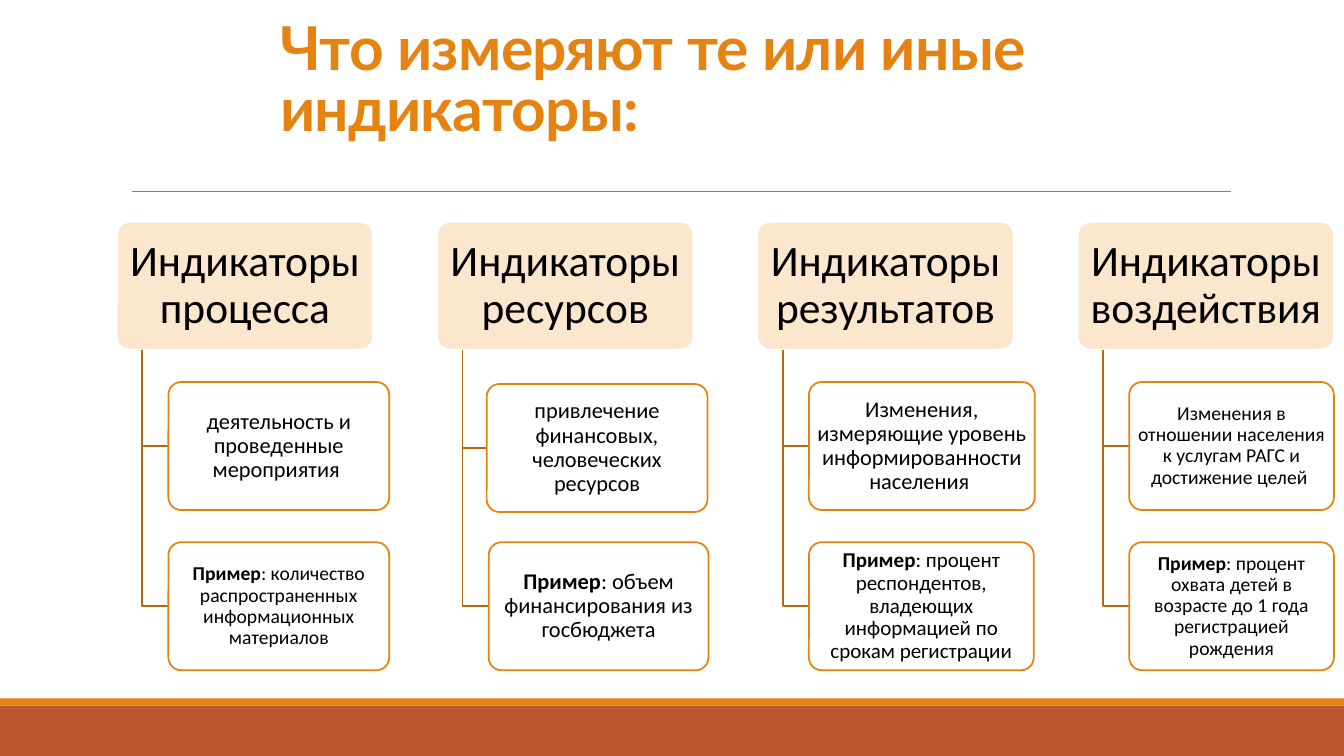
from dataclasses import dataclass

from lxml.etree import SubElement
from pptx import Presentation
from pptx.dml.color import RGBColor
from pptx.enum.shapes import MSO_CONNECTOR, MSO_SHAPE
from pptx.enum.text import MSO_ANCHOR, MSO_AUTO_SIZE, PP_ALIGN
from pptx.oxml.ns import qn
from pptx.util import Inches, Pt


@dataclass(frozen=True)
class Theme:
    accent: str = "E48312"
    footer: str = "BD582C"
    header: str = "FBE6CE"
    branch: str = "B7690E"
    rule: str = "808080"
    paper: str = "FFFFFF"
    ink: str = "000000"
    title_font: str = "Lato"
    body_font: str = "Calibri"
    title_size: float = 43.2
    header_size: float = 31
    line: float = 1.25
    hairline: float = 0.5


THEME = Theme()

TITLE = "Что измеряют те или иные индикаторы:"
EXAMPLE = "Пример"

COLUMN_LEFT = 1.16
COLUMN_PITCH = 9.53 / 3
HEADER_TOP, HEADER_WIDTH, BOX_HEIGHT = 2.2, 2.54, 1.27
TRUNK_INDENT, CARD_INDENT = 0.25, 0.51
CARD_TOPS = (3.79, 5.38)

COLUMNS = [
    ("Индикаторы процесса", [
        {"text": "деятельность и проведенные мероприятия ", "size": 16, "width": 2.19},
        {"lead": EXAMPLE, "text": ": количество распространенных информационных материалов",
         "size": 14, "width": 2.19},
    ]),
    ("Индикаторы ресурсов", [
        {"text": "привлечение финансовых, человеческих ресурсов", "size": 16, "width": 2.19,
         "shift": (-0.02, 0.02)},
        {"lead": EXAMPLE, "text": ": объем финансирования из госбюджета",
         "size": 16, "width": 2.18},
    ]),
    ("Индикаторы результатов", [
        {"text": "Изменения, измеряющие уровень информированности населения ",
         "size": 16, "width": 2.24},
        {"lead": EXAMPLE, "text": ": процент респондентов, владеющих информацией по срокам регистрации",
         "size": 15, "width": 2.23},
    ]),
    ("Индикаторы воздействия", [
        {"text": "Изменения в отношении населения к услугам РАГС и достижение целей ",
         "size": 14, "width": 2.03},
        {"lead": EXAMPLE, "text": ": процент охвата детей в возрасте до 1 года регистрацией рождения",
         "size": 14, "width": 2.03},
    ]),
]


def apply(target, **values):
    for name, value in values.items():
        setattr(target, name, value)


def rgb(color):
    return RGBColor.from_string(color)


def add_run(p, text, font, size, color, bold=False):
    r = p.add_run()
    r.text = text
    apply(r.font, name=font, size=Pt(size), bold=bold)
    r.font.color.rgb = rgb(color)
    return r


def add_box(s, kind, left, top, width, height, fill, line=None):
    sp = s.shapes.add_shape(kind, Inches(left), Inches(top), Inches(width), Inches(height))
    sp.shadow.inherit = False
    sp.fill.solid()
    sp.fill.fore_color.rgb = rgb(fill)
    if line:
        sp.line.color.rgb = rgb(line)
        sp.line.width = Pt(THEME.line)
    else:
        sp.line.fill.background()
    return sp


def add_rounded(s, left, top, width, fill, line, inset):
    sp = add_box(s, MSO_SHAPE.ROUNDED_RECTANGLE, left, top, width, BOX_HEIGHT, fill, line)
    sp.adjustments[0] = 0.1
    side, edge = (Inches(value) for value in inset)
    tf = sp.text_frame
    apply(tf, word_wrap=True, vertical_anchor=MSO_ANCHOR.MIDDLE,
          margin_left=side, margin_right=side, margin_top=edge, margin_bottom=edge)
    p = tf.paragraphs[0]
    apply(p, alignment=PP_ALIGN.CENTER, line_spacing=0.9)
    return sp, p


def add_header(s, left, text):
    _, p = add_rounded(s, left, HEADER_TOP, HEADER_WIDTH, THEME.header, THEME.paper, (0.06, 0.04))
    add_run(p, text, THEME.body_font, THEME.header_size, THEME.ink)


def add_card(s, left, top, card):
    sp, p = add_rounded(s, left, top, card["width"], THEME.paper, THEME.accent, (0.03, 0.02))
    color = sp.fill._xPr.find(qn("a:solidFill"))[0]
    SubElement(color, qn("a:alpha"), val="90000")
    if "lead" in card:
        add_run(p, card["lead"], THEME.body_font, card["size"], THEME.ink, bold=True)
    add_run(p, card["text"], THEME.body_font, card["size"], THEME.ink)


def add_branch(s, trunk, card_left, card_top):
    x, y = Inches(trunk), Inches(HEADER_TOP + BOX_HEIGHT)
    end_x, end_y = Inches(card_left), Inches(card_top + BOX_HEIGHT / 2)
    builder = s.shapes.build_freeform(x, y)
    builder.add_line_segments([(x, end_y), (end_x, end_y)], close=False)
    sp = builder.convert_to_shape()
    sp.shadow.inherit = False
    sp.fill.background()
    sp.line.color.rgb = rgb(THEME.branch)
    sp.line.width = Pt(THEME.line)


def add_column(s, left, heading, cards):
    add_header(s, left, heading)
    for top, card in zip(CARD_TOPS, cards):
        dx, dy = card.get("shift", (0, 0))
        card_left, card_top = left + CARD_INDENT + dx, top + dy
        add_branch(s, left + TRUNK_INDENT, card_left, card_top)
        add_card(s, card_left, card_top, card)


def add_rule(s, left, right, y):
    line = s.shapes.add_connector(MSO_CONNECTOR.STRAIGHT, Inches(left), Inches(y),
                                  Inches(right), Inches(y))
    line.line.color.rgb = rgb(THEME.rule)
    line.line.width = Pt(THEME.hairline)
    SubElement(line._element.spPr, qn("a:effectLst"))


def set_title(s):
    title = s.shapes.title
    apply(title, left=Inches(2.68), top=Inches(0.08), width=Inches(9.75), height=Inches(1.4))
    tf = title.text_frame
    apply(tf, word_wrap=True, auto_size=MSO_AUTO_SIZE.NONE, vertical_anchor=MSO_ANCHOR.BOTTOM)
    p = tf.paragraphs[0]
    apply(p, alignment=PP_ALIGN.LEFT, line_spacing=0.85)
    r = add_run(p, TITLE, THEME.title_font, THEME.title_size, THEME.accent, bold=True)
    r.font._element.set("spc", "-50")


def main():
    prs = Presentation()
    apply(prs, slide_width=Inches(13.33), slide_height=Inches(7.5))
    s = prs.slides.add_slide(prs.slide_layouts[5])
    add_box(s, MSO_SHAPE.RECTANGLE, 0, 7, 13.33, 0.5, THEME.footer)
    add_box(s, MSO_SHAPE.RECTANGLE, 0, 6.93, 13.33, 0.07, THEME.accent)
    add_rule(s, 1.31, 12.21, 1.9)
    set_title(s)
    for i, (heading, cards) in enumerate(COLUMNS):
        add_column(s, COLUMN_LEFT + i * COLUMN_PITCH, heading, cards)
    prs.save("out.pptx")


if __name__ == "__main__":
    main()
